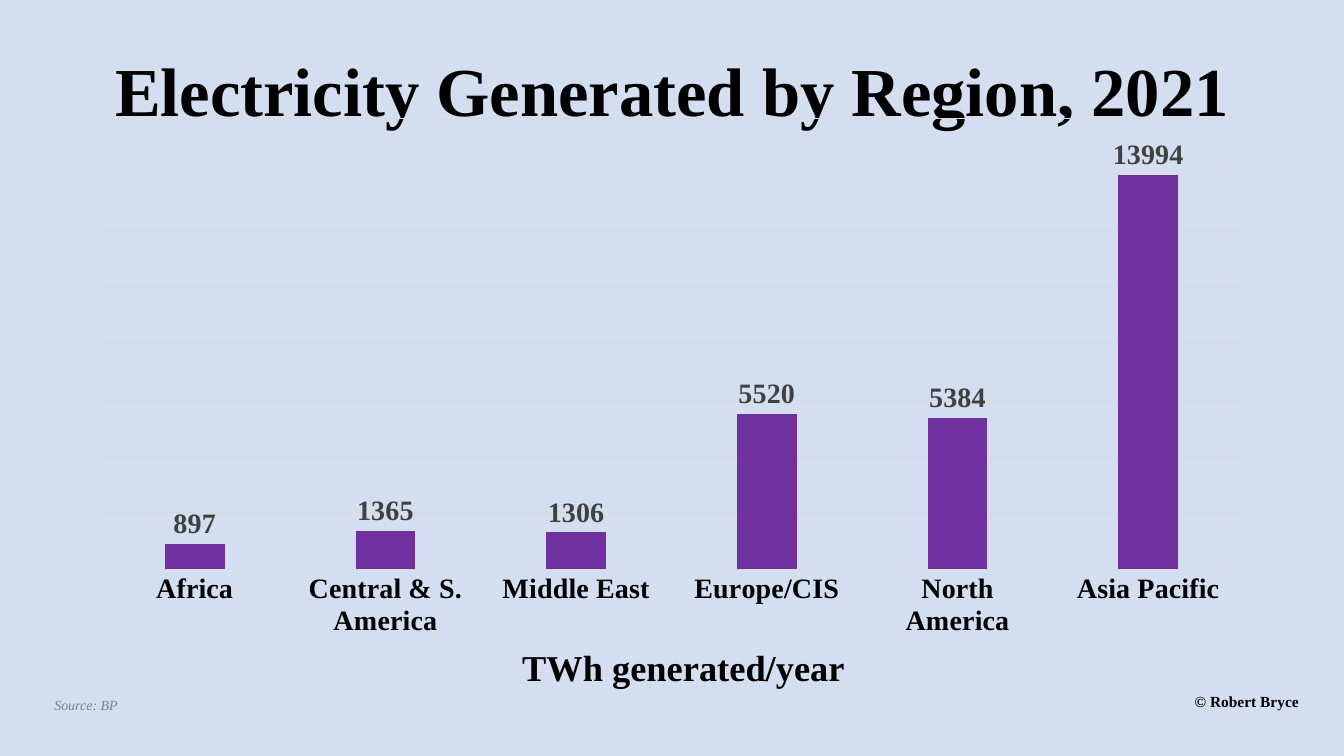
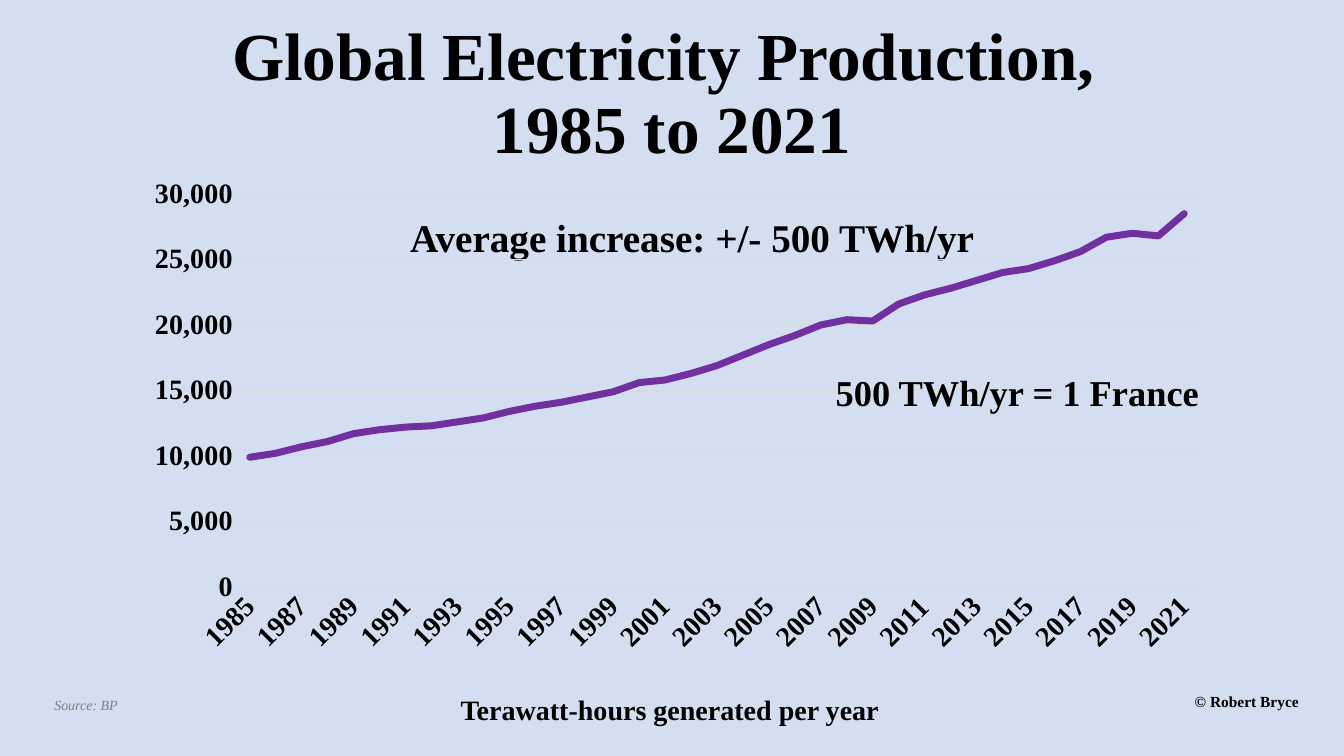
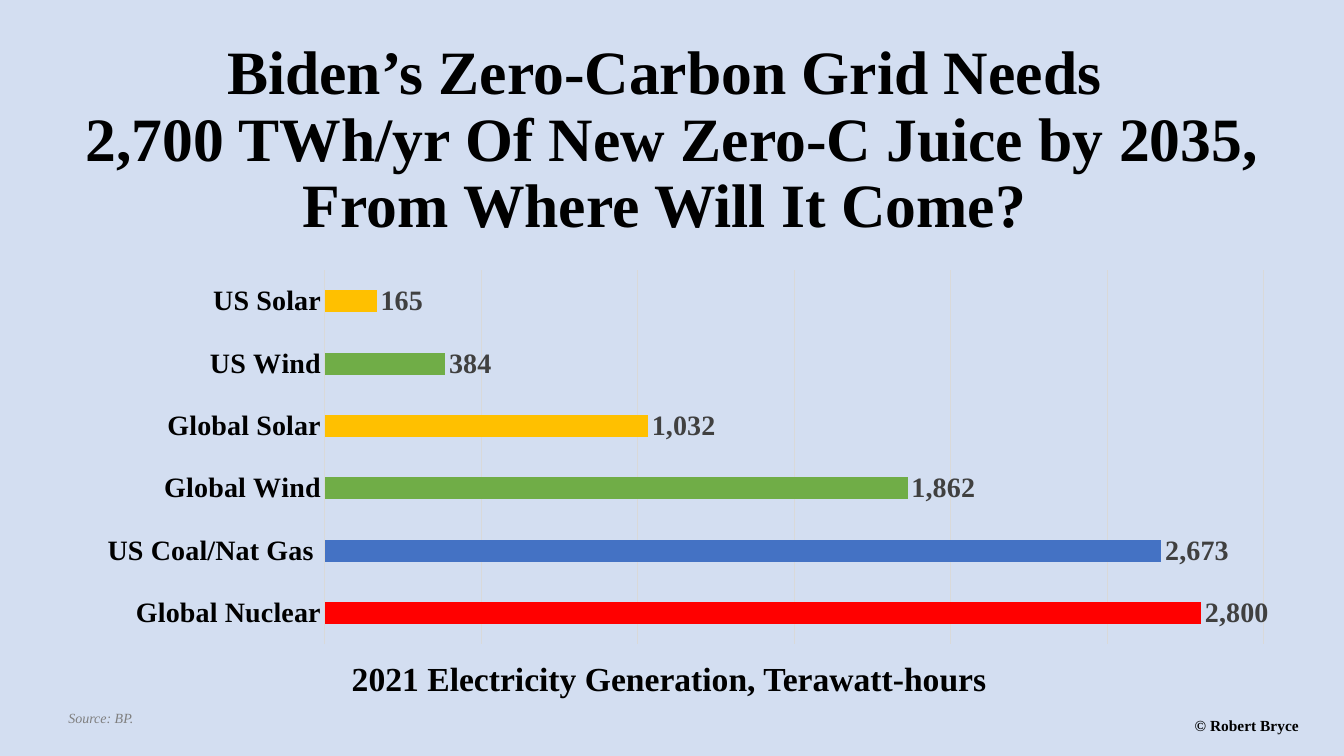
from dataclasses import dataclass, field

from pptx import Presentation
from pptx.chart.chart import Chart
from pptx.chart.data import CategoryChartData as ChartData
from pptx.dml.color import RGBColor as Rgb
from pptx.enum.chart import XL_CHART_TYPE as Kind
from pptx.enum.chart import XL_LABEL_POSITION as Spot
from pptx.enum.chart import XL_TICK_MARK as Tick
from pptx.enum.text import MSO_ANCHOR as Anchor
from pptx.enum.text import MSO_AUTO_SIZE as Fit
from pptx.enum.text import PP_ALIGN as Align
from pptx.oxml import parse_xml
from pptx.oxml.ns import nsdecls
from pptx.slide import Slide
from pptx.text.text import Font
from pptx.util import Inches, Pt

Box = tuple[float, float, float, float]


@dataclass(frozen=True)
class Theme:
    face: str = "Times New Roman"
    base: str = "Calibri"
    back: str = "D3DEF1"
    ink: str = "000000"
    gray: str = "7F7F7F"
    label: str = "404040"
    grid: str = "D9D9D9"
    purple: str = "7030A0"
    blue: str = "4472C4"
    red: str = "FF0000"
    green: str = "70AD47"
    gold: str = "FFC000"
    source: float = 10
    credit: float = 11
    chart: float = 20


THEME = Theme()


@dataclass(frozen=True)
class Note:
    text: str
    box: Box
    size: float
    color: str = THEME.ink
    bold: bool = True
    wrap: bool = False


@dataclass(frozen=True)
class Graph:
    kind: Kind
    box: Box
    cats: list[str]
    vals: list[int]
    top: int
    step: int
    color: str = THEME.purple
    form: str = "#,##0"
    gap: int = 219
    lap: int = 0
    points: dict[int, str] = field(default_factory=dict)
    plot: Box | None = None


@dataclass(frozen=True)
class Page:
    title: str
    box: Box
    size: float
    items: list[Note | Graph]


def style(font: Font, size: float, color: str = THEME.ink, bold: bool = True) -> None:
    font.name = THEME.face
    font.size = Pt(size)
    font.bold = bold
    font.italic = not bold
    font.color.rgb = Rgb.from_string(color)


def place(box: Box) -> list[Inches]:
    return [Inches(part) for part in box]


def add_title(slide: Slide, page: Page) -> None:
    title = slide.shapes.title
    title.left, title.top, title.width, title.height = place(page.box)
    frame = title.text_frame
    frame.text = page.title
    frame.word_wrap = True
    frame.auto_size = Fit.NONE
    frame.vertical_anchor = Anchor.MIDDLE
    para = frame.paragraphs[0]
    para.alignment = Align.CENTER
    para.line_spacing = 0.9
    for run in para.runs:
        style(run.font, page.size)


def add_note(slide: Slide, note: Note) -> None:
    frame = slide.shapes.add_textbox(*place(note.box)).text_frame
    frame.text = note.text
    frame.word_wrap = note.wrap
    frame.auto_size = Fit.NONE if note.wrap else Fit.SHAPE_TO_FIT_TEXT
    style(frame.paragraphs[0].runs[0].font, note.size, note.color, note.bold)


def set_axes(chart: Chart, graph: Graph) -> None:
    line = graph.kind == Kind.LINE
    cat, val = chart.category_axis, chart.value_axis
    for axis in (cat, val):
        axis.major_tick_mark = axis.minor_tick_mark = Tick.NONE
        style(axis.tick_labels.font, THEME.chart)
    val.has_major_gridlines = True
    for rule in (cat.format.line, val.major_gridlines.format.line):
        rule.color.rgb = Rgb.from_string(THEME.grid)
        rule.width = Pt(0.75)
    val.format.line.fill.background()
    val.minimum_scale, val.maximum_scale = 0, graph.top
    val.major_unit = graph.step
    val.tick_labels.number_format = graph.form
    val.tick_labels.number_format_is_linked = False
    val.visible = line
    if line:
        for body in chart.element.xpath(".//c:catAx/c:txPr/a:bodyPr"):
            body.set("rot", "-2700000")


def set_line(chart: Chart) -> None:
    row = chart.plots[0].series[0]
    row.smooth = False
    row.format.line.color.rgb = Rgb.from_string(THEME.purple)
    row.format.line.width = Pt(5)
    for stroke in chart.element.xpath(".//c:ser/c:spPr/a:ln"):
        stroke.set("cap", "rnd")


def set_bars(chart: Chart, graph: Graph) -> None:
    plot = chart.plots[0]
    plot.gap_width, plot.overlap = graph.gap, graph.lap
    row = plot.series[0]
    row.invert_if_negative = False
    fills = [row.format.fill]
    fills += [row.points[spot].format.fill for spot in graph.points]
    for fill, color in zip(fills, [graph.color, *graph.points.values()]):
        fill.solid()
        fill.fore_color.rgb = Rgb.from_string(color)
    plot.has_data_labels = True
    labels = plot.data_labels
    labels.show_value = True
    labels.position = Spot.OUTSIDE_END
    labels.number_format = graph.form
    labels.number_format_is_linked = False
    style(labels.font, THEME.chart, THEME.label)


def set_plot(chart: Chart, box: Box) -> None:
    """Fix the inner plot area, in fractions of the chart."""
    area = chart.element.xpath(".//c:plotArea")[0]
    for old in area.xpath("./c:layout"):
        area.remove(old)
    sides = "".join(f'<c:{key} val="{part}"/>' for key, part in zip("xywh", box))
    area.insert(0, parse_xml(
        f'<c:layout {nsdecls("c")}><c:manualLayout><c:layoutTarget val="inner"/>'
        f'<c:xMode val="edge"/><c:yMode val="edge"/>{sides}'
        "</c:manualLayout></c:layout>"))


def add_graph(slide: Slide, graph: Graph) -> None:
    data = ChartData()
    data.categories = graph.cats
    data.add_series("Series 1", graph.vals)
    chart = slide.shapes.add_chart(graph.kind, *place(graph.box), data).chart
    chart.has_title = chart.has_legend = False
    chart.font.name, chart.font.size = THEME.base, Pt(10)
    chart.plots[0].vary_by_categories = False
    set_axes(chart, graph)
    if graph.kind == Kind.LINE:
        set_line(chart)
    else:
        set_bars(chart, graph)
    if graph.plot:
        set_plot(chart, graph.plot)


def foot(text: str = "Source: BP", left: float = 0.44, top: float = 6.86,
         base: float = 6.82) -> list[Note]:
    """Source line and copyright line of one slide."""
    return [
        Note(text, (left, top, 0.88, 0.27), THEME.source, THEME.gray, bold=False),
        Note("© Robert Bryce", (11.75, base, 1.58, 0.35), THEME.credit, wrap=True),
    ]


PAGES = [
    Page("Electricity Generated by Region, 2021", (0.88, 0.41, 11.57, 1.05), 49, [
        *foot(),
        Graph(Kind.COLUMN_CLUSTERED, (0.75, 1.07, 11.82, 5.35),
              ["Africa", "Central & S. America", "Middle East", "Europe/CIS",
               "North America", "Asia Pacific"],
              [897, 1365, 1306, 5520, 5384, 13994],
              top=16000, step=2000, form="0", lap=-27),
        Note("TWh generated/year", (5.08, 6.35, 3.43, 0.54), 26),
    ]),
    Page("Global Electricity Production, \v1985 to 2021",
         (0.88, 0.42, 11.57, 1.05), 48, [
        *foot(),
        Note("Terawatt-hours generated per year", (4.47, 6.82, 4.38, 0.44), 20),
        Note("Average increase: +/- 500 TWh/yr", (3.97, 2.07, 5.85, 0.57), 28,
             wrap=True),
        Graph(Kind.LINE, (1.32, 1.67, 10.77, 4.91),
              [str(year) for year in range(1985, 2022)],
              [9900, 10200, 10700, 11100, 11700, 12000, 12200, 12300, 12600, 12900,
               13400, 13800, 14100, 14500, 14900, 15600, 15800, 16300, 16900, 17700,
               18500, 19200, 20000, 20400, 20300, 21600, 22300, 22800, 23400, 24000,
               24300, 24900, 25600, 26700, 27000, 26800, 28500],
              top=30000, step=5000),
        Note("500 TWh/yr = 1 France", (8.19, 3.62, 3.84, 0.54), 26),
    ]),
    Page("Biden’s Zero-Carbon Grid Needs \v2,700 TWh/yr Of New Zero-C Juice by 2035,"
         "\vFrom Where Will It Come? ", (0.27, 0.76, 12.8, 1.28), 44, [
        *foot("Source: BP.", 0.58, 6.99, 7.06),
        Note("2021 Electricity Generation, Terawatt-hours",
             (3.39, 6.48, 6.55, 0.5), 24),
        Graph(Kind.BAR_CLUSTERED, (0.12, 2.43, 12.93, 4.17),
              ["Global Nuclear", "US Coal/Nat Gas ", "Global Wind", "Global Solar",
               "US Wind", "US Solar"],
              [2800, 2673, 1862, 1032, 384, 165],
              top=3000, step=500, color=THEME.blue, gap=182,
              points={0: THEME.red, 2: THEME.green, 3: THEME.gold,
                      4: THEME.green, 5: THEME.gold},
              plot=(0.24, 0.06, 0.72, 0.89)),
    ]),
]


def main() -> None:
    deck = Presentation()
    deck.slide_width, deck.slide_height = Inches(13.33), Inches(7.5)
    fill = deck.slide_master.background.fill
    fill.solid()
    fill.fore_color.rgb = Rgb.from_string(THEME.back)
    for page in PAGES:
        slide = deck.slides.add_slide(deck.slide_layouts[5])
        add_title(slide, page)
        for item in page.items:
            if isinstance(item, Graph):
                add_graph(slide, item)
            else:
                add_note(slide, item)
    deck.save("out.pptx")


if __name__ == "__main__":
    main()
